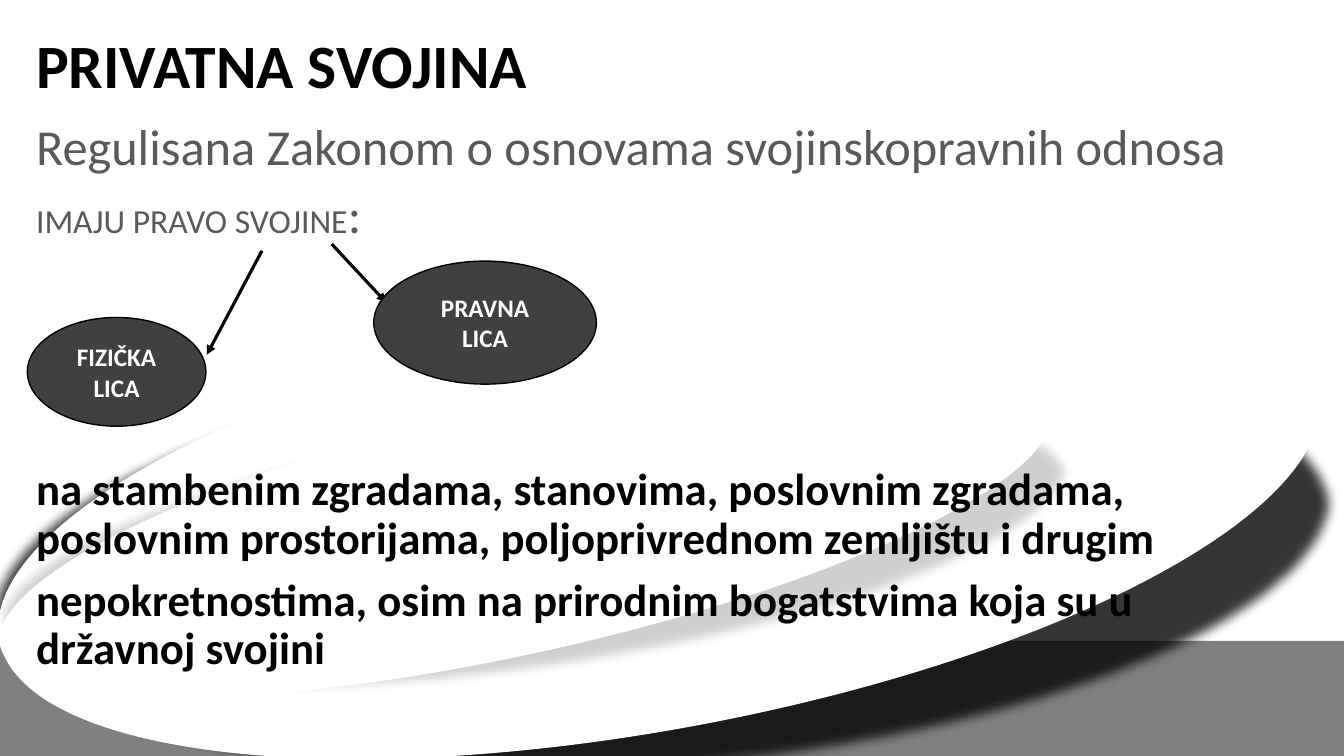
from lxml import etree
from pptx import Presentation
from pptx.dml.color import RGBColor
from pptx.enum import shapes, text
from pptx.oxml import ns
from pptx.util import Cm, Pt

COLORS = {
    "black": "000000",
    "white": "FFFFFF",
    "band": "808080",
    "oval": "404040",
    "grey_text": "595959",
}
FONT = "Calibri"


def color(name):
    return RGBColor.from_string(COLORS[name])


def add_filled(slide, kind, left, top, width, height, fill):
    shape = slide.shapes.add_shape(kind, Cm(left), Cm(top), Cm(width), Cm(height))
    shape.shadow.inherit = False
    shape.fill.solid()
    shape.fill.fore_color.rgb = color(fill)
    shape.line.fill.background()
    return shape


def add_tilted_ellipse(slide, center, size, tilt, fill):
    (x, y), (width, height) = center, size
    shape = add_filled(slide, shapes.MSO_SHAPE.OVAL, x - width / 2, y - height / 2,
                       width, height, fill)
    shape.rotation = tilt
    return shape


def add_swoosh(slide, center, size, tilt, shade_center, shade_tilt, opacity):
    shade_size = [length + 0.4 for length in size]
    shade = add_tilted_ellipse(slide, shade_center, shade_size, shade_tilt, "black")
    properties = shade._element.spPr
    fill_color = properties.find(".//" + ns.qn("a:srgbClr"))
    etree.SubElement(fill_color, ns.qn("a:alpha"), val=str(opacity * 1000))
    effects = properties.find(ns.qn("a:effectLst"))
    etree.SubElement(effects, ns.qn("a:softEdge"), rad=str(Pt(8)))
    add_tilted_ellipse(slide, center, size, tilt, "white")


def style(font, size, fill, bold=False):
    font.name = FONT
    font.size = Pt(size)
    font.bold = bold
    font.color.rgb = color(fill)


def add_text(slide, top, width, height, paragraphs, fill, bold=False,
             anchor=text.MSO_ANCHOR.TOP):
    box = slide.shapes.add_textbox(Cm(0.66), Cm(top), Cm(width), Cm(height))
    frame = box.text_frame
    frame.word_wrap = True
    frame.vertical_anchor = anchor
    for index, (content, size) in enumerate(paragraphs):
        paragraph = frame.add_paragraph() if index else frame.paragraphs[0]
        paragraph.text = content
        paragraph.line_spacing = 0.9
        if index:
            paragraph.space_before = Pt(10)
        style(paragraph.font, size, fill, bold)
    return frame


def add_oval(slide, left, top, width, height, label):
    shape = add_filled(slide, shapes.MSO_SHAPE.OVAL, left, top, width, height, "oval")
    shape.line.color.rgb = color("black")
    shape.line.width = Pt(1)
    frame = shape.text_frame
    frame.word_wrap = True
    frame.margin_left = frame.margin_right = Cm(0.3)
    frame.vertical_anchor = text.MSO_ANCHOR.MIDDLE
    paragraph = frame.paragraphs[0]
    paragraph.text = label
    paragraph.alignment = text.PP_ALIGN.CENTER
    style(paragraph.font, 18, "white", True)


def add_arrow(slide, start, end):
    arrow = slide.shapes.add_connector(
        shapes.MSO_CONNECTOR.STRAIGHT, *map(Cm, start + end))
    arrow.line.color.rgb = color("black")
    arrow.line.width = Pt(2.25)
    etree.SubElement(arrow.line._get_or_add_ln(), ns.qn("a:tailEnd"), type="triangle")
    etree.SubElement(arrow._element.spPr, ns.qn("a:effectLst"))


def main():
    presentation = Presentation()
    presentation.slide_width = Cm(33.87)
    presentation.slide_height = Cm(19.05)
    slide = presentation.slides.add_slide(presentation.slide_layouts[6])

    add_filled(slide, shapes.MSO_SHAPE.RECTANGLE, 0, 16.15, 33.87, 2.9, "band")
    add_swoosh(slide, (16.61, 13.02), (33.83, 10.69), -10.6, (16.69, 14.05), -5, 79)
    add_swoosh(slide, (13.25, 13.3), (27.15, 6.27), -12.7, (13.46, 13.72), -8, 19)

    add_text(slide, 0.79, 29.21, 1.88, [("PRIVATNA SVOJINA", 44)], "black", True,
             text.MSO_ANCHOR.MIDDLE)
    intro = add_text(slide, 2.95, 30.99, 3.4, [
        ("Regulisana Zakonom o osnovama svojinskopravnih odnosa", 36),
        ("IMAJU PRAVO SVOJINE", 24),
    ], "grey_text")
    colon = intro.paragraphs[1].add_run()
    colon.text = ":"
    colon.font.size = Pt(36)
    add_text(slide, 11.64, 30.99, 5.6, [
        ("na stambenim zgradama, stanovima, poslovnim zgradama, poslovnim "
         "prostorijama, poljoprivrednom zemljištu i drugim", 32),
        ("nepokretnostima, osim na prirodnim bogatstvima koja su u državnoj svojini", 32),
    ], "black", True)

    add_arrow(slide, (6.6, 6.32), (5.21, 8.94))
    add_arrow(slide, (8.36, 6.15), (9.73, 7.62))
    add_oval(slide, 0.69, 8, 4.5, 2.74, "FIZIČKA LICA")
    add_oval(slide, 9.42, 6.58, 5.61, 3.1, "PRAVNA LICA")

    presentation.save("out.pptx")


if __name__ == "__main__":
    main()
